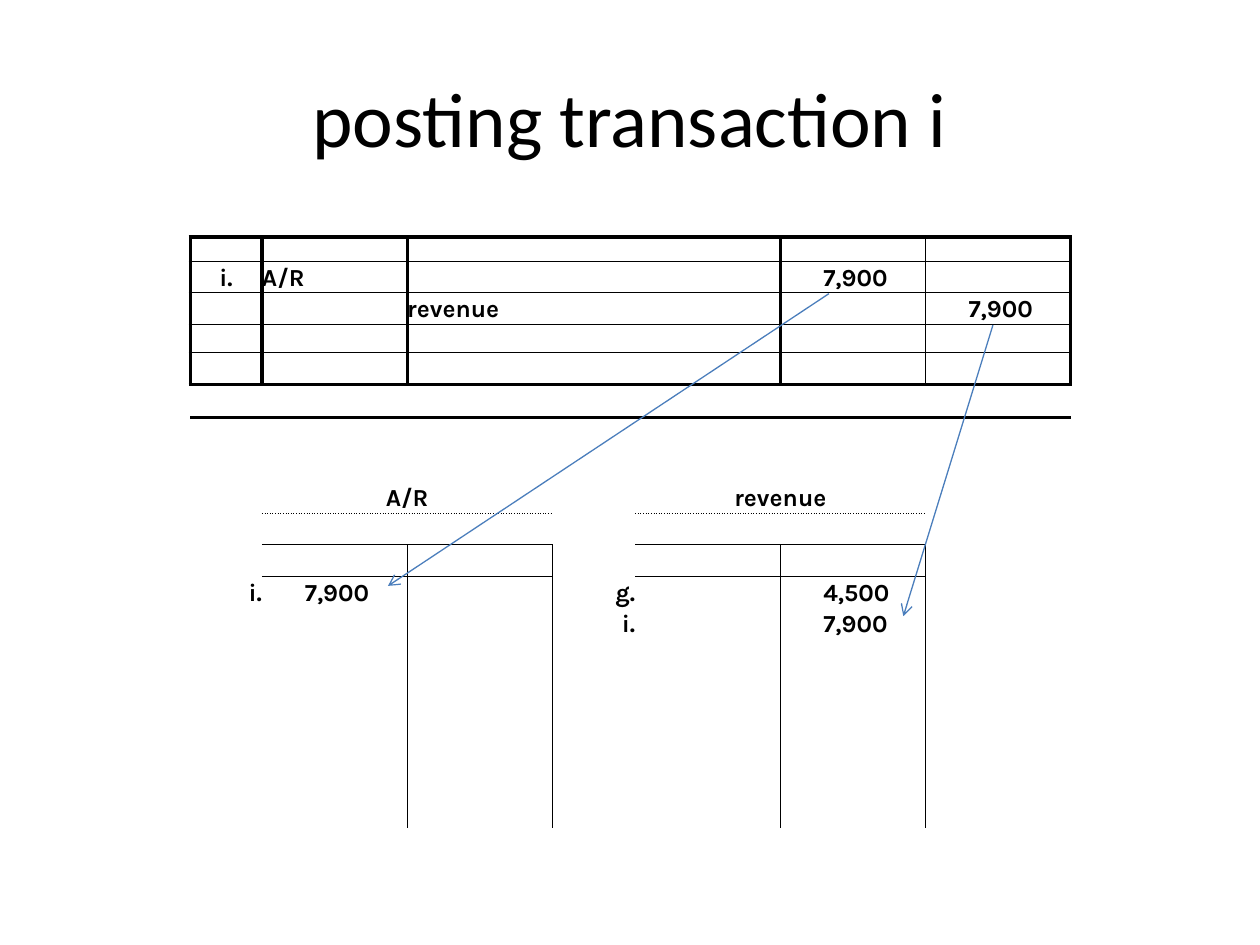
import pptx
import pptx.util
import pptx.dml.color
import pptx.enum.shapes
import pptx.enum.text
import pptx.oxml.ns
from lxml import etree

Pt = pptx.util.Pt
ALIGN = pptx.enum.text.PP_ALIGN
ANCHOR = pptx.enum.text.MSO_ANCHOR
COLORS = {"ink": "000000", "arrow": "4B7EBC"}
NO_GRID_STYLE = "{2D5ABB26-0587-4C30-8999-92F81FD0307C}"

COLS = [41, 83, 83, 47.3, 83, 83, 83]
ROWS = [13.7, 18, 18, 16.5, 18.3, 18.7] + [18.2] * 3 + [18] * 10
JOURNAL_ROWS = 5
HEAD_ROW, STEM_ROW = 8, 10  # account names, first row of the T stems
ACCOUNTS = (1, 4)  # left column of each T-account
JOURNAL_VERTICALS = {0: 2, 1: 2, 5: 2, 6: 0.5, 7: 2}
AMOUNT_INDENT = 24.5

# (row, column): (text, alignment, left indent)
ENTRIES = {
    (1, 0): ("i.", ALIGN.CENTER, 0),
    (1, 1): ("A/R", ALIGN.LEFT, 0),
    (1, 5): ("7,900", ALIGN.LEFT, AMOUNT_INDENT),
    (2, 2): ("revenue", ALIGN.LEFT, 0),
    (2, 6): ("7,900", ALIGN.LEFT, AMOUNT_INDENT),
    (8, 1): ("A/R", ALIGN.CENTER, 0),
    (8, 4): ("revenue", ALIGN.CENTER, 0),
    (11, 0): ("i.", ALIGN.RIGHT, 0),
    (11, 1): ("7,900", ALIGN.LEFT, AMOUNT_INDENT),
    (11, 3): ("g.", ALIGN.RIGHT, 0),
    (11, 5): ("4,500", ALIGN.LEFT, AMOUNT_INDENT),
    (12, 3): ("i.", ALIGN.RIGHT, 0),
    (12, 5): ("7,900", ALIGN.LEFT, AMOUNT_INDENT),
}


def rgb(name):
    return pptx.dml.color.RGBColor.from_string(COLORS[name])


def add_run(p, text, font, size, bold=False):
    r = p.add_run()
    r.text = text
    r.font.name, r.font.size, r.font.bold = font, Pt(size), bold
    r.font.color.rgb = rgb("ink")


def sub(parent, tag, **attrs):
    return etree.SubElement(parent, pptx.oxml.ns.qn(tag), **attrs)


def horizontal_rule(edge, col):
    """Width and dash of the line on a row edge, or None."""
    if edge <= JOURNAL_ROWS:
        return (2 if edge in (0, JOURNAL_ROWS) else 0.5), "solid"
    if any(col in (a, a + 1) for a in ACCOUNTS):
        return {HEAD_ROW + 1: (0.5, "sysDot"), STEM_ROW: (0.5, "solid")}.get(edge)
    return None


def vertical_rule(row, edge):
    """Width and dash of the line on a column edge, or None."""
    if row < JOURNAL_ROWS:
        width = JOURNAL_VERTICALS.get(edge)
        return (width, "solid") if width else None
    if row >= STEM_ROW and edge - 1 in ACCOUNTS:
        return 0.5, "solid"
    return None


def draw_borders(cell, row, col):
    rules = {
        "a:lnL": vertical_rule(row, col),
        "a:lnR": vertical_rule(row, col + 1),
        "a:lnT": horizontal_rule(row, col),
        "a:lnB": horizontal_rule(row + 1, col),
    }
    tc_pr = cell._tc.get_or_add_tcPr()
    for tag, rule in rules.items():
        if rule:
            width, dash = rule
            ln = sub(tc_pr, tag, w=str(int(Pt(width))))
            sub(sub(ln, "a:solidFill"), "a:srgbClr", val=COLORS["ink"])
            sub(ln, "a:prstDash", val=dash)


def add_title(s, left, top, width, height):
    tf = s.shapes.add_textbox(Pt(left), Pt(top), Pt(width), Pt(height)).text_frame
    tf.word_wrap = True
    tf.vertical_anchor = ANCHOR.MIDDLE
    p = tf.paragraphs[0]
    p.alignment = ALIGN.CENTER
    add_run(p, "posting transaction i", "Calibri", 44)


def add_ledger(s, left, top):
    """Journal and the two T-accounts, which share one grid."""
    frame = s.shapes.add_table(len(ROWS), len(COLS), Pt(left), Pt(top),
                               Pt(sum(COLS)), Pt(sum(ROWS)))
    table = frame.table
    table.first_row = table.horz_banding = False
    table._tbl.tblPr.find(pptx.oxml.ns.qn("a:tableStyleId")).text = NO_GRID_STYLE
    for column, width in zip(table.columns, COLS):
        column.width = Pt(width)
    for row, height in zip(table.rows, ROWS):
        row.height = Pt(height)
    for a in ACCOUNTS:
        table.cell(HEAD_ROW, a).merge(table.cell(HEAD_ROW, a + 1))

    for i in range(len(ROWS)):
        for j in range(len(COLS)):
            cell = table.cell(i, j)
            text, align, indent = ENTRIES.get((i, j), ("", ALIGN.LEFT, 0))
            cell.margin_left = Pt(indent)
            cell.margin_top = cell.margin_right = cell.margin_bottom = 0
            cell.vertical_anchor = ANCHOR.BOTTOM
            draw_borders(cell, i, j)
            cell.fill.background()
            p = cell.text_frame.paragraphs[0]
            p.alignment = align
            if text:
                add_run(p, text, "Karla", 14, bold=True)
            else:
                # Small type keeps empty cells from stretching the row
                sub(p._p, "a:endParaRPr", sz="800")


def add_posting_arrow(s, left, top, start, end):
    """Arrow between two points measured from the ledger's corner."""
    cx = s.shapes.add_connector(
        pptx.enum.shapes.MSO_CONNECTOR.STRAIGHT,
        Pt(left + start[0]), Pt(top + start[1]),
        Pt(left + end[0]), Pt(top + end[1]))
    cx.line.color.rgb = rgb("arrow")
    cx.line.width = Pt(0.75)
    sub(cx.line._get_or_add_ln(), "a:tailEnd", type="arrow")
    sub(cx._element.spPr, "a:effectLst")


def main():
    prs = pptx.Presentation()
    prs.slide_width, prs.slide_height = Pt(720), Pt(540)
    s = prs.slides.add_slide(prs.slide_layouts[6])

    add_title(s, 36, 21.6, 648, 90)
    ledger = (108.7, 135.4)
    add_ledger(s, *ledger)
    # Journal amounts to their accounts
    add_posting_arrow(s, *ledger, (365, 32.4), (113, 199.4))
    add_posting_arrow(s, *ledger, (458.7, 50.4), (407.5, 216.7))

    prs.save("out.pptx")


if __name__ == "__main__":
    main()
